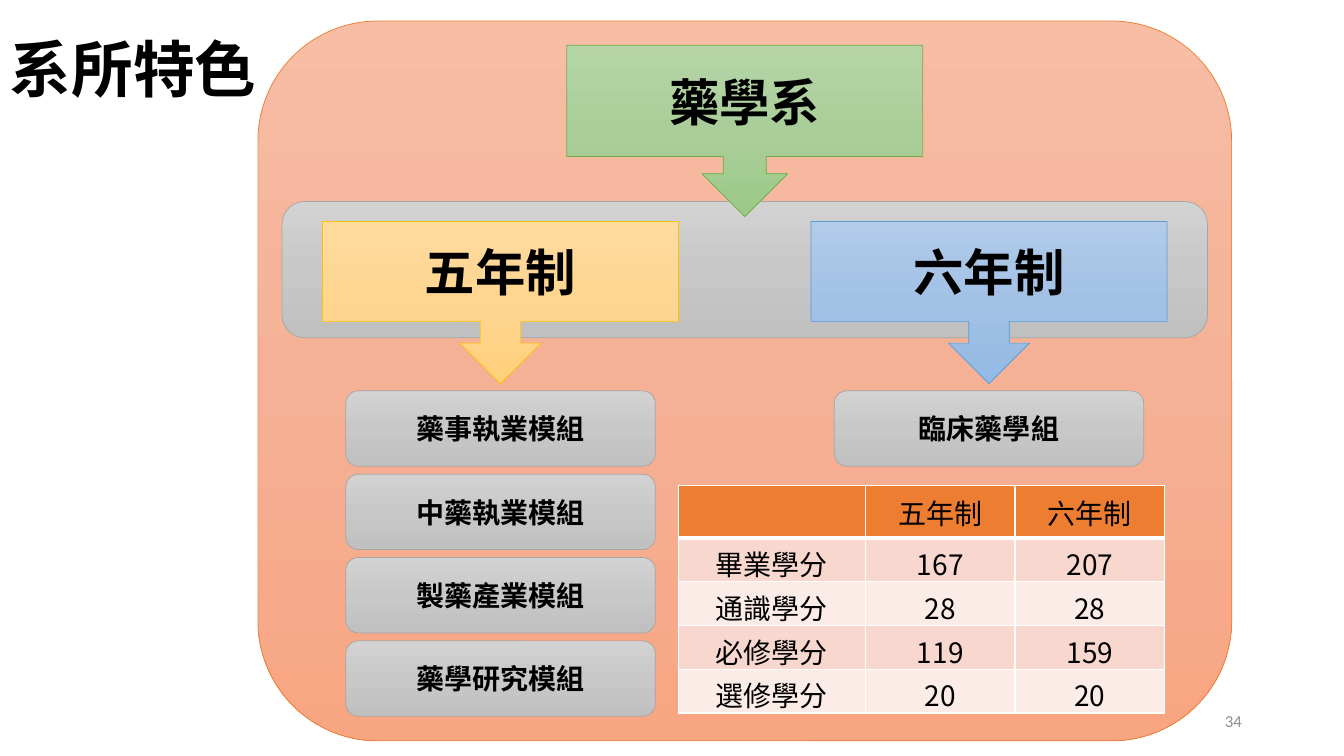
from copy import deepcopy

from lxml.etree import SubElement
from pptx import Presentation
from pptx.dml.color import RGBColor
from pptx.enum.shapes import MSO_SHAPE as Preset
from pptx.enum.text import MSO_ANCHOR as Anchor, PP_ALIGN as Align
from pptx.oxml import parse_xml
from pptx.oxml.ns import nsdecls, qn
from pptx.util import Cm, Pt

FONT = "Noto Sans CJK SC"
COLORS = {
    "text": "000000", "number": "8C8C8C", "border": "FFFFFF",
    "header": "ED7D31", "odd": "F8D7CE", "even": "FCECE8",
}
GRADIENTS = {
    "orange": ("F7BDA5", "F5B196", "F8A582"),
    "gray": ("D2D2D2", "C8C8C8", "C0C0C0"),
    "green": ("B5D5A7", "AACE9A", "9CC987"),
    "gold": ("FFDB9E", "FFD590", "FFD07C"),
    "blue": ("B1CBE9", "A3C1E5", "93B9E4"),
}
LINES = {"orange": "ED7D31", "gray": "A5A5A5", "green": "70AD47",
         "gold": "FFC000", "blue": "5B9BD5"}
PROGRAMMES = [
    ("五年制", "gold", ["藥事執業模組", "中藥執業模組", "製藥產業模組", "藥學研究模組"]),
    ("六年制", "blue", ["臨床藥學組"]),
]
CREDITS = [
    ("", "五年制", "六年制"),
    ("畢業學分", "167", "207"),
    ("通識學分", "28", "28"),
    ("必修學分", "119", "159"),
    ("選修學分", "20", "20"),
]


def write(frame, text, size, bold=False, align=Align.CENTER, color="text", font=FONT):
    """Put one styled paragraph in a text frame and return it."""
    frame.word_wrap = True
    paragraph = frame.paragraphs[0]
    paragraph.text = text
    paragraph.alignment = align
    paragraph.font.size = Pt(size)
    paragraph.font.bold = bold
    paragraph.font.color.rgb = RGBColor.from_string(COLORS[color])
    paragraph.font.name = font
    properties = paragraph._p.pPr.find(qn("a:defRPr"))
    SubElement(properties, qn("a:ea"), typeface=font)
    return paragraph


def add_text(slide, box, text, size, **style):
    """Add a vertically centred text box and return its paragraph."""
    frame = slide.shapes.add_textbox(*map(Cm, box)).text_frame
    paragraph = write(frame, text, size, **style)
    frame.vertical_anchor = Anchor.MIDDLE
    return paragraph


def add_block(slide, preset, box, theme, text="", size=20):
    """Add a preset shape with a vertical gradient and optional bold text."""
    shape = slide.shapes.add_shape(preset, *map(Cm, box))
    shape.shadow.inherit = False
    shape.line.color.rgb = RGBColor.from_string(LINES[theme])
    shape.line.width = Pt(0.5)
    shape.fill.gradient()
    shape.fill.gradient_angle = 270
    stop_list = shape._element.spPr.find(qn("a:gradFill")).find(qn("a:gsLst"))
    stop_list.insert(1, deepcopy(stop_list[0]))
    for index, (stop, color) in enumerate(zip(shape.fill.gradient_stops, GRADIENTS[theme])):
        stop.position = index / 2
        stop.color.rgb = RGBColor.from_string(color)
    if text:
        write(shape.text_frame, text, size, bold=True)
        shape.text_frame.vertical_anchor = Anchor.MIDDLE
    return shape


def add_programme(slide, box, name, theme, modules):
    """Add a programme callout with its modules stacked below."""
    left, top, width, height = box
    callout = add_block(slide, Preset.DOWN_ARROW_CALLOUT, box, theme, name, 36)
    callout.adjustments[3] = 0.616
    module_width, module_height, pitch = 7.8, 1.9, 2.1
    module_left = left + (width - module_width) / 2
    for index, module in enumerate(modules):
        module_top = top + height + 0.18 + index * pitch
        module_box = (module_left, module_top, module_width, module_height)
        add_block(slide, Preset.ROUNDED_RECTANGLE, module_box, "gray", module)


def add_department(slide, box):
    """Add the panel with the department callout and its two programmes."""
    left, top, width, height = box
    callout_width = 8.97
    add_block(slide, Preset.ROUNDED_RECTANGLE, box, "orange")
    band_left, band_top, band_width = left + 0.61, top + 4.55, width - 1.22
    add_block(slide, Preset.ROUNDED_RECTANGLE,
              (band_left, band_top, band_width, 3.43), "gray")
    add_block(slide, Preset.DOWN_ARROW_CALLOUT,
              (left + (width - callout_width) / 2, top + 0.61, callout_width, 4.32),
              "green", "藥學系", 36)
    inset = 1.02
    step = band_width - 2 * inset - callout_width
    for index, programme in enumerate(PROGRAMMES):
        programme_box = (band_left + inset + index * step, band_top + 0.5,
                         callout_width, 4.09)
        add_programme(slide, programme_box, *programme)


def set_borders(cell, bottom_width):
    """Draw white borders around a table cell."""
    properties = cell._tc.get_or_add_tcPr()
    for index, side in enumerate("LRTB"):
        width = Pt(bottom_width if side == "B" else 1)
        properties.insert(index, parse_xml(
            f'<a:ln{side} {nsdecls("a")} w="{width}"><a:solidFill>'
            f'<a:srgbClr val="{COLORS["border"]}"/></a:solidFill></a:ln{side}>'))


def add_credits(slide, box):
    """Add the table of credits for both programmes."""
    left, top, width, height = box
    table = slide.shapes.add_table(len(CREDITS), len(CREDITS[0]), *map(Cm, box)).table
    table.first_row = table.horz_banding = False
    label_width, header_height = 4.72, 1.32
    for index, column in enumerate(table.columns):
        column.width = Cm((width - label_width) / 2 if index else label_width)
    for index, row in enumerate(table.rows):
        row.height = Cm((height - header_height) / 4 if index else header_height)
        fill = "header" if index == 0 else "odd" if index % 2 else "even"
        for cell, text in zip(row.cells, CREDITS[index]):
            cell.fill.solid()
            cell.fill.fore_color.rgb = RGBColor.from_string(COLORS[fill])
            cell.vertical_anchor = Anchor.MIDDLE
            set_borders(cell, 1 if index else 3)
            if text:
                write(cell.text_frame, text, 20)


def main():
    """Build the slide and save it."""
    presentation = Presentation()
    presentation.slide_width, presentation.slide_height = Cm(33.87), Cm(19.05)
    slide = presentation.slides.add_slide(presentation.slide_layouts[6])
    title = add_text(slide, (0, 0, 29.21, 3.68), "系所特色", 44, bold=True, align=Align.LEFT)
    title.line_spacing = 0.9
    add_department(slide, (6.5, 0.53, 24.54, 18.14))
    add_text(slide, (23.93, 17.65, 7.62, 1.02), "34", 12,
             align=Align.RIGHT, color="number", font="Calibri")
    add_credits(slide, (17.09, 12.24, 12.26, 5.5))
    presentation.save("out.pptx")


if __name__ == "__main__":
    main()
